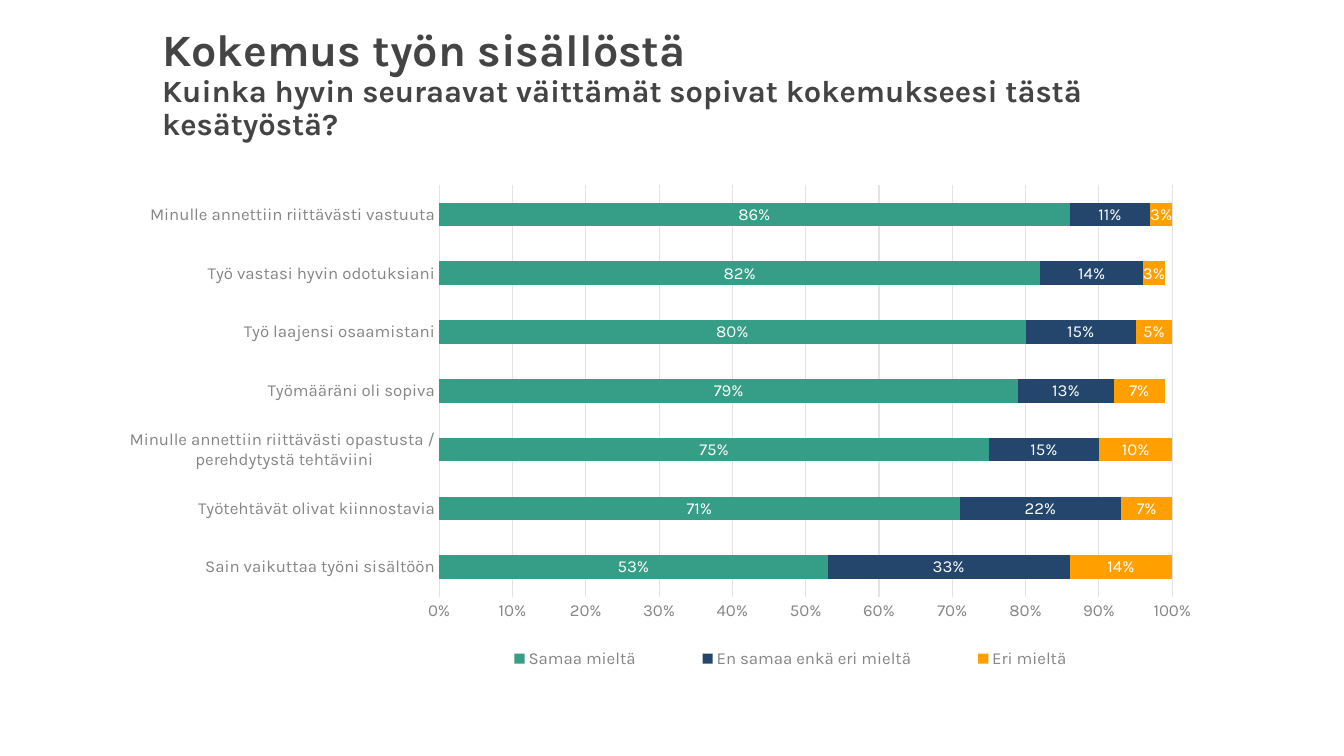
from lxml import etree
from pptx import Presentation
from pptx import util as u
from pptx.chart.data import CategoryChartData
from pptx.dml.color import RGBColor
from pptx.enum import chart as kinds, text
from pptx.oxml import ns

WIDTH, HEIGHT = u.Inches(13.33), u.Inches(7.5)
FONT = "Karla"
DARK = RGBColor(0x44, 0x44, 0x44)
GREY = RGBColor(0x85, 0x85, 0x85)
PALE = RGBColor(0xE3, 0xE3, 0xE3)
WHITE = RGBColor(0xFF, 0xFF, 0xFF)
GREEN = RGBColor(0x36, 0x9D, 0x87)
NAVY = RGBColor(0x24, 0x46, 0x6D)
ORANGE = RGBColor(0xFF, 0xA0, 0x00)

TITLE = "Kokemus työn sisällöstä"
QUESTION = "Kuinka hyvin seuraavat väittämät sopivat kokemukseesi tästä kesätyöstä?"
STATEMENTS = [
    ("Sain vaikuttaa työni sisältöön", 0.53, 0.33, 0.14),
    ("Työtehtävät olivat kiinnostavia", 0.71, 0.22, 0.07),
    ("Minulle annettiin riittävästi opastusta /\n perehdytystä tehtäviini", 0.75, 0.15, 0.1),
    ("Työmääräni oli sopiva", 0.79, 0.13, 0.07),
    ("Työ laajensi osaamistani", 0.8, 0.15, 0.05),
    ("Työ vastasi hyvin odotuksiani", 0.82, 0.14, 0.03),
    ("Minulle annettiin riittävästi vastuuta", 0.86, 0.11, 0.03),
]
ANSWERS = [("Samaa mieltä", GREEN), ("En samaa enkä eri mieltä", NAVY), ("Eri mieltä", ORANGE)]


def share(left, top, width, height):
    return [round(part * side) for part, side in
            zip((left, top, width, height), (WIDTH, HEIGHT, WIDTH, HEIGHT))]


def style(font, size, color, bold=False):
    font.name, font.size, font.bold = FONT, u.Pt(size), bold
    font.color.rgb = color


def add_title(page):
    box = page.shapes.add_textbox(*share(0.1133, 0.036, 0.8095, 0.1533))
    frame = box.text_frame
    frame.word_wrap = True
    frame.vertical_anchor = text.MSO_ANCHOR.MIDDLE
    frame.text = f"{TITLE}\v{QUESTION}"
    para = frame.paragraphs[0]
    para.line_spacing = 0.9
    for span, size in zip(para.runs, (32, 22)):
        style(span.font, size, DARK, bold=True)


def place(parent, index, bounds, inner=False):
    for old in parent.findall(ns.qn("c:layout")):
        parent.remove(old)
    layout = etree.Element(ns.qn("c:layout"))
    manual = etree.SubElement(layout, ns.qn("c:manualLayout"))
    settings = [("layoutTarget", "inner")] if inner else []
    settings += [("xMode", "edge"), ("yMode", "edge"), *zip("xywh", bounds)]
    for name, value in settings:
        etree.SubElement(manual, ns.qn(f"c:{name}")).set("val", str(value))
    parent.insert(index, layout)


def style_axis(axis):
    axis.major_tick_mark = axis.minor_tick_mark = kinds.XL_TICK_MARK.NONE
    style(axis.tick_labels.font, 12, GREY)


def style_line(line):
    line.color.rgb = PALE
    line.width = u.Pt(0.75)


def style_series(series, color):
    series.format.fill.solid()
    series.format.fill.fore_color.rgb = color
    series.invert_if_negative = False
    labels = series.data_labels
    labels.show_value = True
    labels.number_format, labels.number_format_is_linked = "0%", False
    labels.position = kinds.XL_LABEL_POSITION.CENTER
    style(labels.font, 12, WHITE)


def add_answers(page):
    names, *columns = zip(*STATEMENTS)
    figures = CategoryChartData(number_format="0%")
    figures.categories = names
    for (answer, _), values in zip(ANSWERS, columns):
        figures.add_series(answer, values)
    chart = page.shapes.add_chart(kinds.XL_CHART_TYPE.BAR_STACKED,
                                  *share(0.0863, 0.224, 0.8095, 0.696), figures).chart
    chart.has_title = False
    style(chart.font, 10, DARK)

    plot = chart.plots[0]
    plot.gap_width, plot.overlap, plot.vary_by_categories = 150, 100, False
    for series, (_, color) in zip(plot.series, ANSWERS):
        style_series(series, color)

    style_axis(chart.category_axis)
    style_line(chart.category_axis.format.line)
    scale = chart.value_axis
    style_axis(scale)
    scale.minimum_scale, scale.maximum_scale, scale.major_unit = 0, 1, 0.1
    scale.tick_labels.number_format = "0%"
    scale.tick_labels.number_format_is_linked = False
    scale.format.line.fill.background()
    style_line(scale.major_gridlines.format.line)

    chart.has_legend = True
    legend = chart.legend
    legend.position = kinds.XL_LEGEND_POSITION.BOTTOM
    legend.include_in_layout = False
    style(legend.font, 12, GREY)
    place(legend._element, 1, (0.31, 0.9, 0.62, 0.06))
    place(chart._chartSpace.chart.plotArea, 0, (0.297, 0.03, 0.674, 0.782), inner=True)


def main():
    deck = Presentation()
    deck.slide_width, deck.slide_height = WIDTH, HEIGHT
    page = deck.slides.add_slide(deck.slide_layouts[6])
    add_title(page)
    add_answers(page)
    deck.save("out.pptx")


if __name__ == "__main__":
    main()
